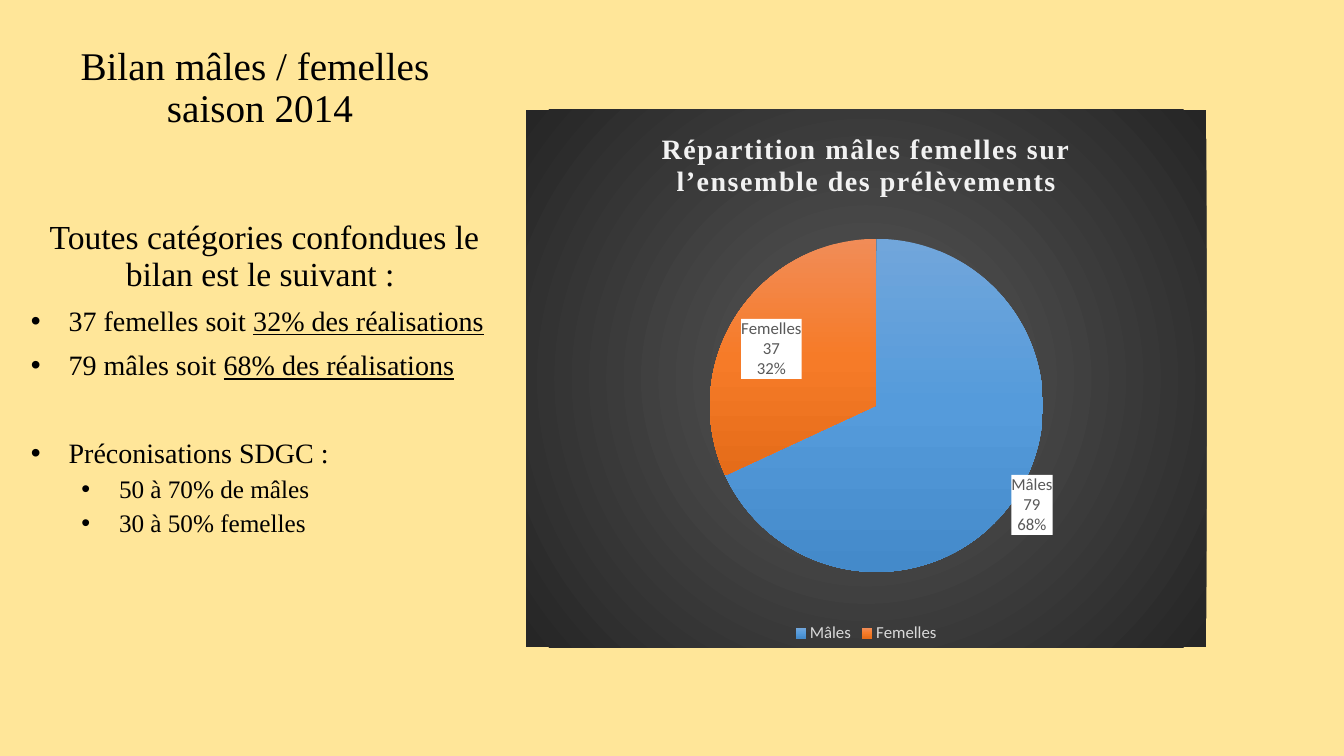
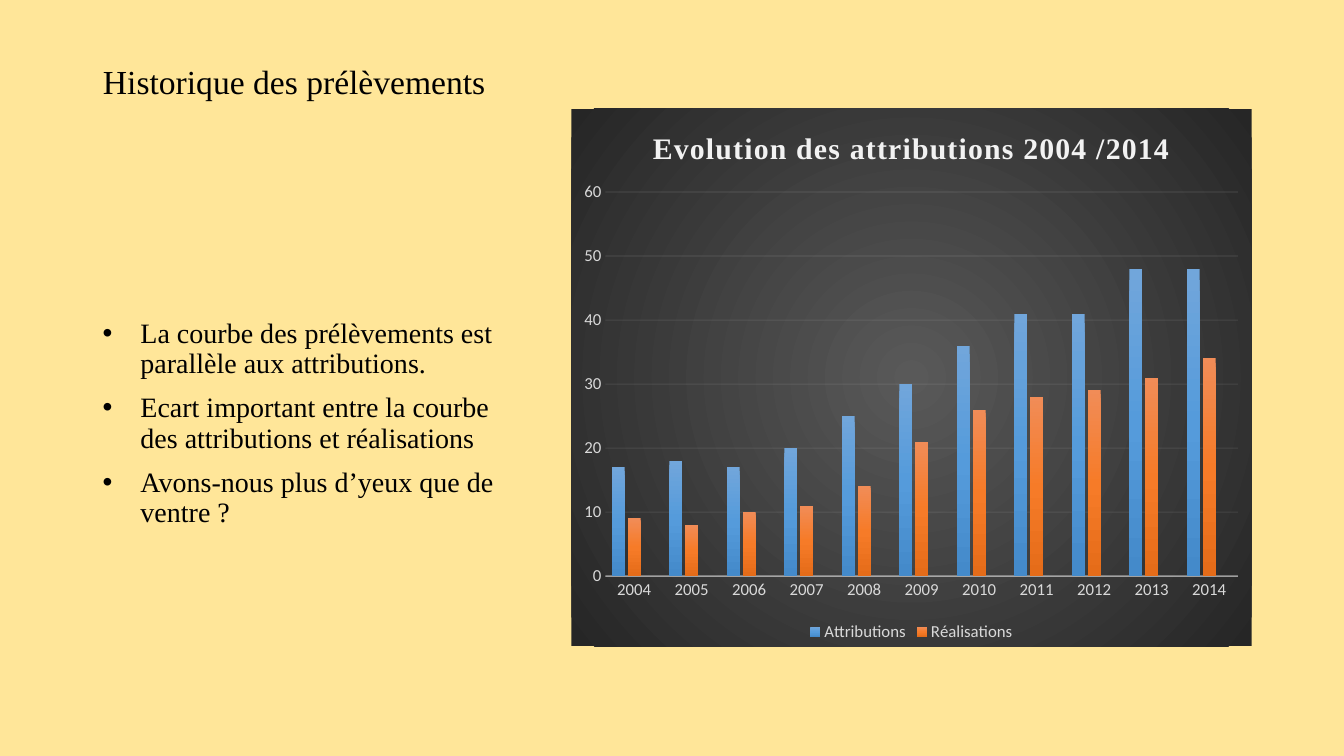
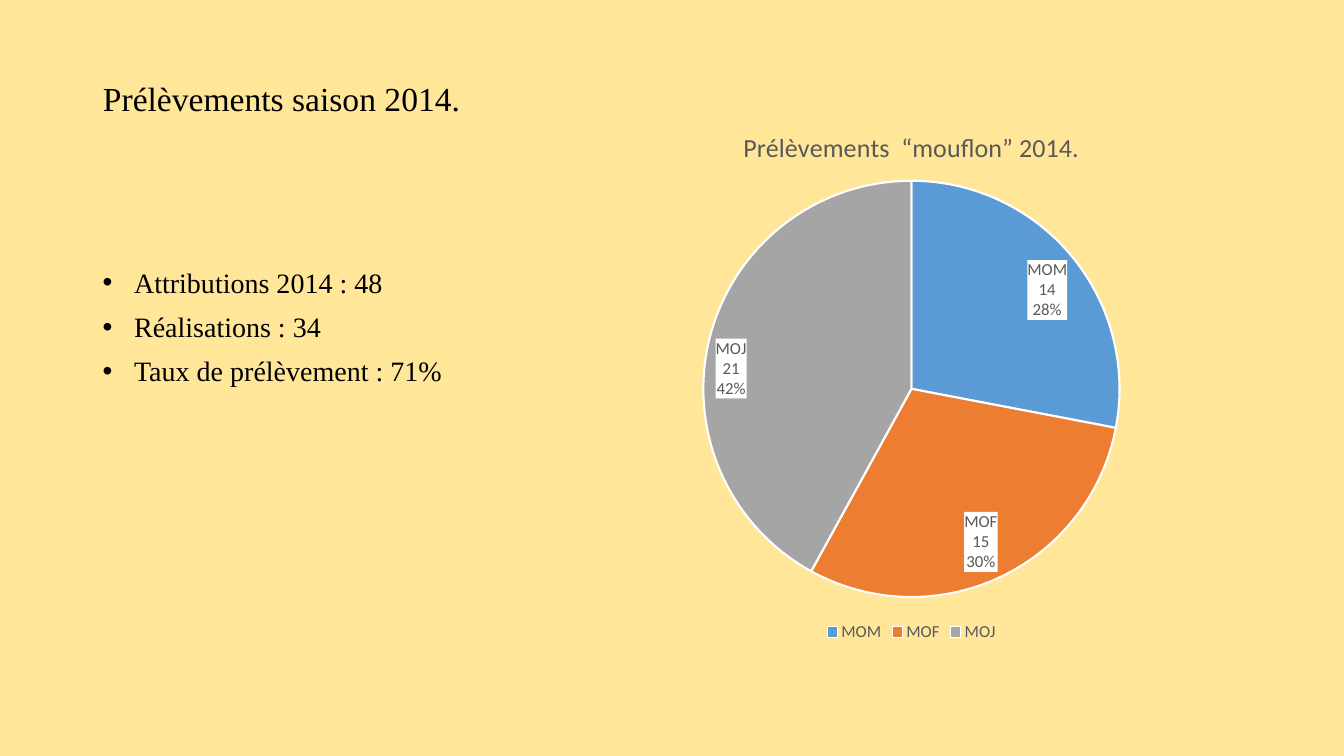
import copy

import pptx
import pptx.chart.data
import pptx.dml.color
import pptx.enum.chart
import pptx.enum.text
import pptx.oxml
import pptx.oxml.ns
import pptx.util

Cm, Pt = pptx.util.Cm, pptx.util.Pt
qn = pptx.oxml.ns.qn
XL = pptx.enum.chart
TXT = pptx.enum.text

COLORS = {
    "background": "FFE699", "text": "000000", "white": "FFFFFF",
    "chart_title": "F2F2F2", "light": "D9D9D9", "grey": "595959",
    "dark": "262626", "blue": "5B9BD5", "orange": "ED7D31", "silver": "A5A5A5",
}
BLUE_GRADIENT = [(0, "71A6DB"), (50, "559BDB"), (100, "448ACA")]
ORANGE_GRADIENT = [(0, "F18C57"), (50, "F67B28"), (100, "E56C19")]
DARK_GRADIENT = [(0, COLORS["grey"]), (100, COLORS["dark"])]
SERIF, SANS = "Times New Roman", "Calibri"
CHART_W, CHART_H = 17.14, 13.54


def rgb(name):
    return pptx.dml.color.RGBColor.from_string(COLORS[name])


def xml(text):
    """Parse one element, declaring the chart and drawing namespaces."""
    head, sep, tail = text.partition(">")
    slash = "/" if head.endswith("/") else ""
    head = head.rstrip("/")
    return pptx.oxml.parse_xml(f"{head} {pptx.oxml.ns.nsdecls('c', 'a')}{slash}{sep}{tail}")


def style(font, size, color, name, bold=None):
    font.size, font.name, font.bold = Pt(size), name, bold
    font.color.rgb = rgb(color)


def gradient(stops, direction):
    gs = "".join(f'<a:gs pos="{pos * 1000}"><a:srgbClr val="{c}"/></a:gs>' for pos, c in stops)
    return f"<a:gradFill><a:gsLst>{gs}</a:gsLst>{direction}</a:gradFill>"


def fill_gradient(spPr, stops):
    """Swap the solid fill of a bar or slice for a vertical gradient."""
    spPr.replace(spPr[0], xml(gradient(stops, '<a:lin ang="5400000" scaled="0"/>')))


# Text regions
def add_title(s, box, text, size, align):
    sp = s.shapes.title
    sp.left, sp.top, sp.width, sp.height = (Cm(v) for v in box)
    tf = sp.text_frame
    tf.text = text
    tf.word_wrap = True
    tf.auto_size = TXT.MSO_AUTO_SIZE.NONE
    tf.vertical_anchor = TXT.MSO_ANCHOR.BOTTOM
    p = tf.paragraphs[0]
    p.alignment, p.line_spacing = align, 0.9
    for r in p.runs:
        style(r.font, size, "text", SERIF)


def add_bullet(p, margin, hanging):
    pPr = p._p.get_or_add_pPr()
    pPr.set("marL", str(Cm(margin)))
    pPr.set("indent", str(-Cm(hanging)))
    pPr.append(xml('<a:buFont typeface="Arial"/>'))
    pPr.append(xml('<a:buChar char="•"/>'))


def add_body(s, box, items, hanging=0.95):
    """Each item is a dict: text, and optionally underlined, size, level, before, bullet."""
    tf = s.shapes.add_textbox(*(Cm(v) for v in box)).text_frame
    tf.word_wrap = True
    for i, item in enumerate(items):
        p = tf.add_paragraph() if i else tf.paragraphs[0]
        p.level = item.get("level", 0)
        p.line_spacing, p.space_before = 0.9, Pt(item.get("before", 10))
        for text, underlined in ((item["text"], False), (item.get("underlined"), True)):
            if text:
                r = p.add_run()
                r.text = text
                style(r.font, item.get("size", 20), "text", SERIF)
                r.font.underline = underlined
        if item.get("bullet", True):
            add_bullet(p, hanging + 1.27 * p.level, hanging)
        else:
            p.alignment = TXT.PP_ALIGN.CENTER


# Chart regions
def add_chart(s, kind, left, top, cats, series, title, plot_box, dark):
    """Chart with title, bottom legend and plot area; plot_box is in fractions."""
    data = pptx.chart.data.CategoryChartData()
    data.categories = cats
    for name, values in series:
        data.add_series(name, values)
    chart = s.shapes.add_chart(kind, Cm(left), Cm(top), Cm(CHART_W), Cm(CHART_H), data).chart
    style(chart.font, 10, "text", SANS)

    text, size = title
    chart.has_title = True
    tf = chart.chart_title.text_frame
    tf.text = text
    r = tf.paragraphs[0].runs[0]
    if dark:
        style(r.font, size, "chart_title", SERIF, True)
        r._r.get_or_add_rPr().set("spc", "100")
    else:
        style(r.font, size, "grey", SANS, False)
    chart.chart_title.include_in_layout = False

    chart.has_legend = True
    chart.legend.position = XL.XL_LEGEND_POSITION.BOTTOM
    chart.legend.include_in_layout = False
    style(chart.legend.font, 12, "light" if dark else "grey", SANS)

    # Plot area position
    area = chart._chartSpace.find(qn("c:chart")).find(qn("c:plotArea"))
    for old in area.findall(qn("c:layout")):
        area.remove(old)
    sizes = "".join(f'<c:{k} val="{v}"/>' for k, v in zip("xywh", plot_box))
    area.insert(0, xml('<c:layout><c:manualLayout><c:layoutTarget val="inner"/>'
                       '<c:xMode val="edge"/><c:yMode val="edge"/>'
                       f"{sizes}</c:manualLayout></c:layout>"))

    # Chart background
    fill = "<a:noFill/>"
    if dark:
        fill = gradient(DARK_GRADIENT, '<a:path path="circle"><a:fillToRect l="50000" '
                                       't="50000" r="50000" b="50000"/></a:path>')
    chart._chartSpace.find(qn("c:txPr")).addprevious(
        xml(f"<c:spPr>{fill}<a:ln><a:noFill/></a:ln></c:spPr>"))
    return chart


def add_pie(s, left, top, cats, values, title, plot_box, fills, dark=False, moved_labels=()):
    """Pie with boxed labels; moved_labels lists (point, dx, dy) in fractions."""
    chart = add_chart(s, XL.XL_CHART_TYPE.PIE, left, top, cats, [("Series 1", values)],
                      title, plot_box, dark)
    chart.plots[0].vary_by_categories = True
    ser = chart.plots[0].series[0]
    for i, fill in enumerate(fills):
        fmt = ser.points[i].format
        fmt.fill.solid()
        if dark:
            fmt.line.fill.background()
            fill_gradient(ser._element.findall(qn("c:dPt"))[i].find(qn("c:spPr")), fill)
        else:
            fmt.fill.fore_color.rgb = rgb(fill)
            fmt.line.color.rgb = rgb("white")
            fmt.line.width = Pt(1.5)

    labels = ser.data_labels
    labels.show_value = labels.show_percentage = labels.show_category_name = True
    labels.position = XL.XL_LABEL_POSITION.INSIDE_END
    style(labels.font, 12, "grey", SANS)
    dLbls = labels._element
    dLbls.find(qn("c:txPr")).addprevious(
        xml(f'<c:spPr><a:solidFill><a:srgbClr val="{COLORS["white"]}"/></a:solidFill></c:spPr>'))
    dLbls.find(qn("c:showBubbleSize")).addnext(xml("<c:separator>\n</c:separator>"))
    shared = [e for e in dLbls if e.tag != qn("c:showLeaderLines")]
    for i, (point, dx, dy) in enumerate(moved_labels):
        dLbl = xml(f'<c:dLbl><c:idx val="{point}"/><c:layout><c:manualLayout>'
                   f'<c:x val="{dx}"/><c:y val="{dy}"/></c:manualLayout></c:layout></c:dLbl>')
        for e in shared:
            dLbl.append(copy.deepcopy(e))
        dLbls.insert(i, dLbl)


def set_line(owner, width, opacity):
    """Translucent line for an axis or its gridlines."""
    line = owner.format.line
    line.color.rgb = rgb("chart_title")
    line.width = Pt(width)
    clr = owner._element.xpath(".//a:ln//a:srgbClr")[0]
    clr.append(xml(f'<a:alpha val="{opacity * 1000}"/>'))


def add_columns(s, left, top, cats, series, title, plot_box, fills):
    # The unnamed third slot stays empty and out of the legend
    series = series + [("Series 3", [None] * len(cats))]
    chart = add_chart(s, XL.XL_CHART_TYPE.COLUMN_CLUSTERED, left, top, cats, series,
                      title, plot_box, True)
    plot = chart.plots[0]
    plot.vary_by_categories = False
    plot.gap_width, plot.overlap = 100, -24
    for ser, fill in zip(plot.series, fills):
        ser.format.fill.solid()
        fill_gradient(ser._element.find(qn("c:spPr")), fill)
    chart.legend._element.find(qn("c:legendPos")).addnext(
        xml('<c:legendEntry><c:idx val="2"/><c:delete val="1"/></c:legendEntry>'))

    # Axes
    for axis in (chart.category_axis, chart.value_axis):
        axis.major_tick_mark = axis.minor_tick_mark = XL.XL_TICK_MARK.NONE
        style(axis.tick_labels.font, 12, "light", SANS)
    set_line(chart.category_axis, 1, 54)
    axis = chart.value_axis
    axis.minimum_scale, axis.maximum_scale, axis.major_unit = 0, 60, 10
    axis.format.line.fill.background()
    axis.has_major_gridlines = True
    set_line(axis.major_gridlines, 0.75, 10) if hasattr(axis.major_gridlines, "_element") \
        else set_grid(axis)


def set_grid(axis):
    line = axis.major_gridlines.format.line
    line.color.rgb = rgb("chart_title")
    line.width = Pt(0.75)
    clr = axis._element.xpath("./c:majorGridlines//a:srgbClr")[0]
    clr.append(xml('<a:alpha val="10000"/>'))


# Slides
def slide_males_females(s):
    add_title(s, (1.09, 1.09, 10.92, 2.34), "Bilan mâles / femelles \vsaison 2014", 28,
              TXT.PP_ALIGN.CENTER)
    add_pie(s, 13.26, 2.77, ["Mâles", "Femelles"], [79, 37],
            ("Répartition mâles femelles sur l’ensemble des prélèvements", 20),
            (0.27, 0.24, 0.49, 0.62), [BLUE_GRADIENT, ORANGE_GRADIENT], True,
            [(0, 0.06, 0.08)])
    add_body(s, (0.53, 5.44, 12.27, 10.59), [
        {"text": "Toutes catégories confondues le bilan est le suivant : ", "size": 24,
         "bullet": False},
        {"text": "37 femelles soit ", "underlined": "32% des réalisations"},
        {"text": "79 mâles soit ", "underlined": "68% des réalisations"},
        {"text": "Préconisations SDGC :", "before": 41},
        {"text": "50 à 70% de mâles", "size": 18, "level": 1, "before": 5},
        {"text": "30 à 50% femelles", "size": 18, "level": 1, "before": 5},
    ])


def slide_history(s):
    add_title(s, (2.34, 1.27, 10.92, 1.42), "Historique des prélèvements", 24,
              TXT.PP_ALIGN.LEFT)
    add_columns(s, 14.4, 2.74, [str(year) for year in range(2004, 2015)], [
        ("Attributions", [17, 18, 17, 20, 25, 30, 36, 41, 41, 48, 48]),
        ("Réalisations", [9, 8, 10, 11, 14, 21, 26, 28, 29, 31, 34]),
    ], ("Evolution des attributions 2004 /2014", 21.3), (0.05, 0.155, 0.93, 0.715),
        [BLUE_GRADIENT, ORANGE_GRADIENT])
    add_body(s, (2.34, 7.92, 10.92, 8.38), [
        {"text": "La courbe des prélèvements est parallèle aux attributions."},
        {"text": "Ecart important entre la courbe des attributions et réalisations"},
        {"text": "Avons-nous plus d’yeux que de ventre ?"},
    ])


def slide_season(s):
    add_title(s, (2.34, 1.27, 10.92, 1.85), "Prélèvements saison 2014.", 24,
              TXT.PP_ALIGN.LEFT)
    add_pie(s, 14.4, 2.74, ["MOM", "MOF", "MOJ"], [14, 15, 21],
            ("Prélèvements  “mouflon” 2014.", 18.6), (0.194, 0.134, 0.612, 0.775),
            ["blue", "orange", "silver"])
    add_body(s, (2.34, 6.65, 10.92, 9.65), [
        {"text": "Attributions 2014 : 48"},
        {"text": "Réalisations : 34"},
        {"text": "Taux de prélèvement : 71%"},
    ], 0.79)


def main():
    prs = pptx.Presentation()
    prs.slide_width, prs.slide_height = Cm(33.87), Cm(19.05)
    fill = prs.slide_master.background.fill
    fill.solid()
    fill.fore_color.rgb = rgb("background")
    for build in (slide_males_females, slide_history, slide_season):
        build(prs.slides.add_slide(prs.slide_layouts[5]))
    prs.save("out.pptx")


if __name__ == "__main__":
    main()
